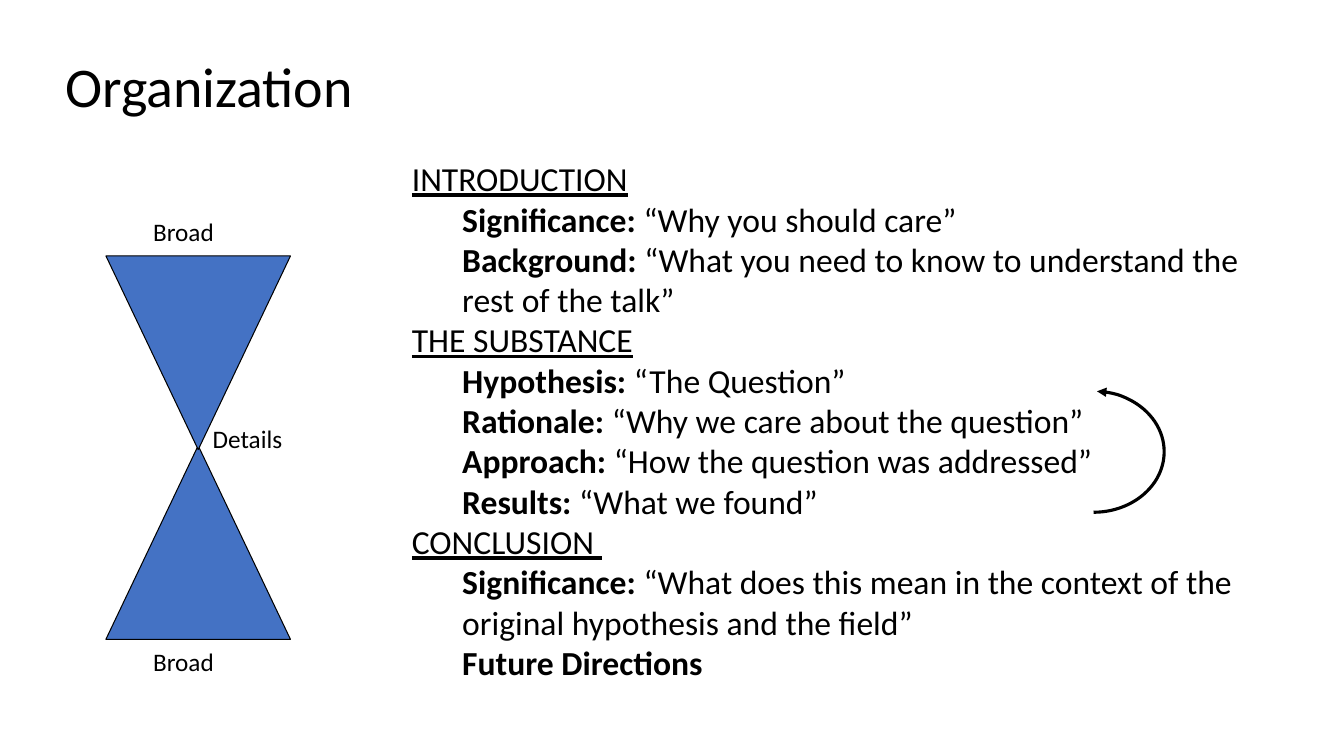
from lxml import etree
from pptx import Presentation
from pptx import util as u
from pptx.dml.color import RGBColor
from pptx.enum import shapes, text
from pptx.oxml import ns

BLACK = RGBColor(0x00, 0x00, 0x00)
BLUE = RGBColor(0x44, 0x72, 0xC4)
FONT = "Calibri"

OUTLINE = [
    ("INTRODUCTION", [
        ("Significance:", " “Why you should care”"),
        ("Background:", " “What you need to know to understand the rest of the talk”"),
    ]),
    ("THE SUBSTANCE", [
        ("Hypothesis:", " “The Question”"),
        ("Rationale:", " “Why we care about the question”"),
        ("Approach:", " “How the question was addressed”"),
        ("Results:", " “What we found”"),
    ]),
    ("CONCLUSION ", [
        ("Significance:", " “What does this mean in the context of the original hypothesis and the field”"),
        ("Future Directions", ""),
    ]),
]


def style_font(font, size):
    font.name = FONT
    font.size = u.Pt(size)
    font.color.rgb = BLACK


def add_text_frame(slide, left, top, width, height, wrap=True):
    box = slide.shapes.add_textbox(u.Cm(left), u.Cm(top), u.Cm(width), u.Cm(height))
    box.text_frame.word_wrap = wrap
    return box.text_frame


def add_title(slide, title):
    frame = add_text_frame(slide, 1.4, 0.66, 26.26, 3.18)
    frame.vertical_anchor = text.MSO_ANCHOR.MIDDLE
    paragraph = frame.paragraphs[0]
    paragraph.text = title
    paragraph.line_spacing = 0.9
    style_font(paragraph.font, 40)


def add_label(slide, label, left, top, width):
    frame = add_text_frame(slide, left, top, width, 1.02, wrap=False)
    paragraph = frame.paragraphs[0]
    paragraph.text = label
    style_font(paragraph.font, 18)


def add_triangle(slide, top, rotation=0):
    shape = slide.shapes.add_shape(
        shapes.MSO_SHAPE.ISOSCELES_TRIANGLE, u.Cm(2.67), u.Cm(top), u.Cm(4.65), u.Cm(4.88))
    shape.rotation = rotation
    shape.shadow.inherit = False
    shape.fill.solid()
    shape.fill.fore_color.rgb = BLUE
    shape.line.color.rgb = BLACK
    shape.line.width = u.Pt(0.75)


def add_outline(slide, sections):
    frame = add_text_frame(slide, 10.13, 3.86, 22.25, 13.59)
    entries = []
    for heading, points in sections:
        entries.append((heading, None))
        entries.extend(points)
    for index, (lead, detail) in enumerate(entries):
        paragraph = frame.add_paragraph() if index else frame.paragraphs[0]
        style_font(paragraph.font, 24)
        run = paragraph.add_run()
        run.text = lead
        if detail is None:
            run.font.underline = True
            continue
        run.font.bold = True
        paragraph.level = 1
        properties = paragraph._p.get_or_add_pPr()
        properties.set("marL", str(u.Cm(1.27)))
        properties.set("indent", "0")
        if detail:
            paragraph.add_run().text = detail


def add_return_arrow(slide):
    shape = slide.shapes.add_shape(
        shapes.MSO_SHAPE.ARC, u.Cm(25.78), u.Cm(9.86), u.Cm(3.56), u.Cm(3.05))
    shape.adjustments[0] = 273.3 * 0.6
    shape.adjustments[1] = 90 * 0.6
    shape.shadow.inherit = False
    shape.fill.background()
    shape.line.color.rgb = BLACK
    shape.line.width = u.Pt(2.25)
    etree.SubElement(shape.line._get_or_add_ln(), ns.qn("a:headEnd"), type="triangle")


def main():
    presentation = Presentation()
    presentation.slide_width = u.Cm(33.87)
    presentation.slide_height = u.Cm(19.05)
    slide = presentation.slides.add_slide(presentation.slide_layouts[6])
    add_title(slide, "Organization")
    add_triangle(slide, 11.23)
    add_triangle(slide, 6.45, rotation=180)
    add_label(slide, "Broad", 3.61, 5.33, 2.06)
    add_label(slide, "Details", 5.11, 10.54, 2.29)
    add_label(slide, "Broad", 3.61, 16.15, 2.06)
    add_outline(slide, OUTLINE)
    add_return_arrow(slide)
    presentation.save("out.pptx")


if __name__ == "__main__":
    main()
